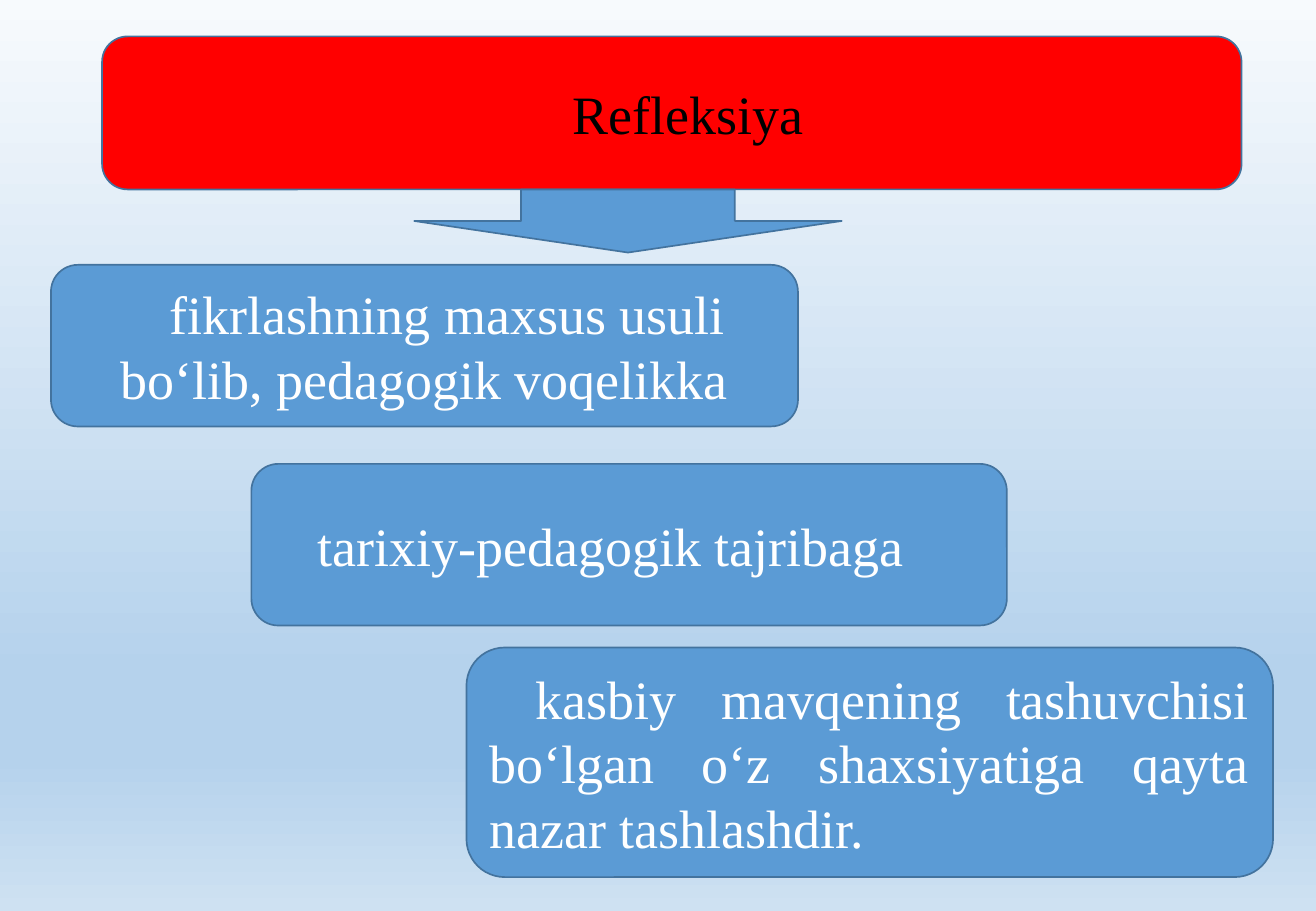
from dataclasses import dataclass

import pptx
import pptx.dml.color
import pptx.enum.shapes
import pptx.enum.text
import pptx.oxml
import pptx.oxml.ns
import pptx.slide
import pptx.util
from pptx.util import Pt

SHAPE = pptx.enum.shapes.MSO_SHAPE
ALIGN = pptx.enum.text.PP_ALIGN

COLORS = {
    "red": "FF0000",
    "blue": "5B9BD5",
    "outline": "43739E",
    "black": "000000",
    "white": "FFFFFF",
}
SKY_STOPS = [(0, "F7FAFD"), (74, "B5D2EC"), (83, "B5D2EC"), (100, "CEE1F2")]
FONT_NAME = "Times New Roman"
FONT_SIZE = 32
FIRST_LINE_INDENT = 27.4


@dataclass
class Block:
    left: float
    top: float
    width: float
    height: float
    text: str = ""
    align: ALIGN = ALIGN.CENTER
    fill: str = "blue"
    font_color: str = "white"
    outline_form: SHAPE = SHAPE.ROUNDED_RECTANGLE


BLOCKS = [
    # Term and the arrow to its definition
    Block(60.5, 21.6, 675.4, 90.7, "Refleksiya ", fill="red", font_color="black"),
    Block(245.5, 112.3, 253.4, 37.4, outline_form=SHAPE.DOWN_ARROW),
    # Definition steps
    Block(149, 275, 447.8, 95.8, "tarixiy-pedagogik tajribaga ", ALIGN.JUSTIFY),
    Block(30.2, 157, 442.8, 95.8,
          "fikrlashning maxsus usuli bo‘lib, pedagogik voqelikka"),
    Block(276.5, 383.8, 478.1, 136.1,
          "kasbiy mavqening tashuvchisi bo‘lgan o‘z shaxsiyatiga "
          "qayta nazar tashlashdir.", ALIGN.JUSTIFY),
]


def rgb(name: str) -> pptx.dml.color.RGBColor:
    return pptx.dml.color.RGBColor.from_string(COLORS[name])


def paint_background(slide: pptx.slide.Slide) -> None:
    sky = slide.background.fill
    sky.gradient()
    sky.gradient_angle = 270
    # Replace the two default stops with the four of the sky
    stop_list = next(slide.background._cSld.iter(pptx.oxml.ns.qn("a:gsLst")))
    for default_stop in list(stop_list):
        stop_list.remove(default_stop)
    for percent, color in SKY_STOPS:
        stop_list.append(pptx.oxml.parse_xml(
            f'<a:gs {pptx.oxml.ns.nsdecls("a")} pos="{percent * 1000}">'
            f'<a:srgbClr val="{color}"/></a:gs>'))


def draw_block(slide: pptx.slide.Slide, block: Block) -> None:
    shape = slide.shapes.add_shape(
        block.outline_form, Pt(block.left), Pt(block.top),
        Pt(block.width), Pt(block.height))
    shape.shadow.inherit = False
    shape.fill.solid()
    shape.fill.fore_color.rgb = rgb(block.fill)
    shape.line.color.rgb = rgb("outline")
    shape.line.width = Pt(1)
    if not block.text:
        return
    frame = shape.text_frame
    frame.word_wrap = True
    frame.vertical_anchor = pptx.enum.text.MSO_ANCHOR.MIDDLE
    paragraph = frame.paragraphs[0]
    paragraph.text = block.text
    paragraph.alignment = block.align
    paragraph._p.get_or_add_pPr().set("indent", str(Pt(FIRST_LINE_INDENT)))
    font = paragraph.runs[0].font
    font.name = FONT_NAME
    font.size = Pt(FONT_SIZE)
    font.color.rgb = rgb(block.font_color)


def main() -> None:
    presentation = pptx.Presentation()
    presentation.slide_width = Pt(780)
    presentation.slide_height = Pt(540)
    slide = presentation.slides.add_slide(presentation.slide_layouts[6])
    paint_background(slide)
    for block in BLOCKS:
        draw_block(slide, block)
    presentation.save("out.pptx")


if __name__ == "__main__":
    main()
